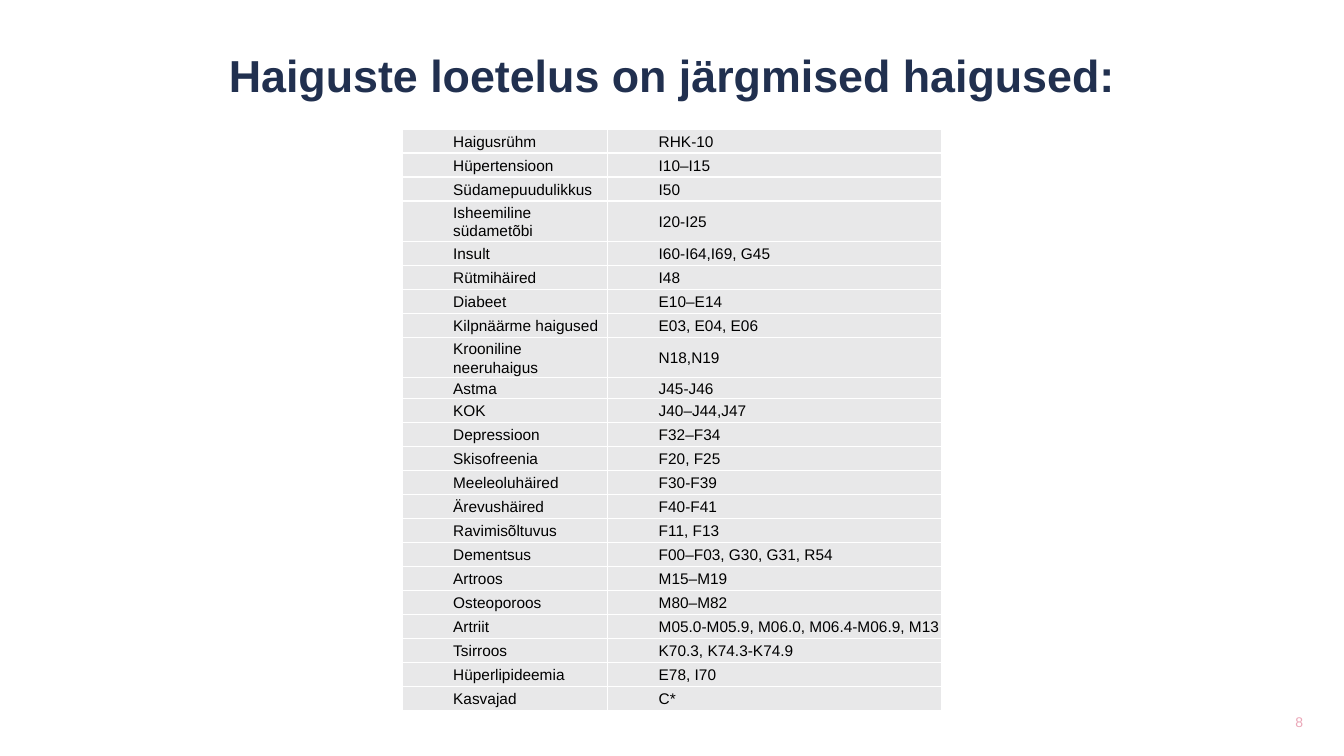
from lxml import etree
from pptx import Presentation
from pptx.dml.color import RGBColor
from pptx.enum.text import MSO_ANCHOR, MSO_AUTO_SIZE, PP_ALIGN
from pptx.oxml.ns import qn
from pptx.util import Cm, Pt

MIDDLE, BOTTOM = MSO_ANCHOR.MIDDLE, MSO_ANCHOR.BOTTOM
CENTER, LEFT = PP_ALIGN.CENTER, PP_ALIGN.LEFT
NO_AUTOFIT = MSO_AUTO_SIZE.NONE
TITLE_ONLY = 5
FONT = "Arial"
NAVY, PINK, BLACK, GREY, WHITE = "21304F", "EBA7B8", "000000", "E8E8E9", "FFFFFF"
ROW_HEIGHT = Cm(12.1) // 20
SHORT_ROW_HEIGHT = Cm(0.52)
SHORT_ROWS = ("Krooniline neeruhaigus", "Astma")
COLUMN_WIDTHS = (5.18, 8.43)
DISEASES = (
    ("Haigusrühm", "RHK-10"),
    ("Hüpertensioon", "I10–I15"),
    ("Südamepuudulikkus", "I50"),
    ("Isheemiline südametõbi", "I20-I25"),
    ("Insult", "I60-I64,I69, G45"),
    ("Rütmihäired", "I48"),
    ("Diabeet", "E10–E14"),
    ("Kilpnäärme haigused", "E03, E04, E06"),
    ("Krooniline neeruhaigus", "N18,N19"),
    ("Astma", "J45-J46"),
    ("KOK", "J40–J44,J47"),
    ("Depressioon", "F32–F34"),
    ("Skisofreenia", "F20, F25"),
    ("Meeleoluhäired", "F30-F39"),
    ("Ärevushäired", "F40-F41"),
    ("Ravimisõltuvus", "F11, F13"),
    ("Dementsus", "F00–F03, G30, G31, R54"),
    ("Artroos", "M15–M19"),
    ("Osteoporoos", "M80–M82"),
    ("Artriit", "M05.0-M05.9, M06.0, M06.4-M06.9, M13"),
    ("Tsirroos", "K70.3, K74.3-K74.9"),
    ("Hüperlipideemia", "E78, I70"),
    ("Kasvajad", "C*"),
)


def colour(value):
    """Turn a hex string into a colour."""
    return RGBColor.from_string(value)


def write(frame, text, size, shade, align, bold=False):
    """Fill a text frame with one formatted paragraph and return it."""
    frame.text = text
    para = frame.paragraphs[0]
    para.alignment = align
    font = para.runs[0].font
    font.name, font.size, font.bold = FONT, Pt(size), bold
    font.color.rgb = colour(shade)
    return para


def place(shape, box):
    """Move a shape to a box of left, top, width and height in centimetres."""
    shape.left, shape.top, shape.width, shape.height = map(Cm, box)


def add_title(page, box):
    """Place and format the page title."""
    title = page.shapes.title
    place(title, box)
    frame = title.text_frame
    frame.margin_left = frame.margin_right = frame.margin_top = frame.margin_bottom = 0
    frame.auto_size, frame.vertical_anchor, frame.word_wrap = NO_AUTOFIT, BOTTOM, True
    para = write(frame, "Haiguste loetelus on järgmised haigused:", 32, NAVY, CENTER, True)
    para.line_spacing, para.space_before = 0.9, Pt(10)


def add_borders(cell):
    """Draw white lines on all four sides of a table cell."""
    properties = cell._tc.get_or_add_tcPr()
    for position, side in enumerate(("a:lnL", "a:lnR", "a:lnT", "a:lnB")):
        line = etree.Element(qn(side), w=str(Pt(1)))
        fill = etree.SubElement(line, qn("a:solidFill"))
        etree.SubElement(fill, qn("a:srgbClr"), val=WHITE)
        properties.insert(position, line)


def format_cell(cell, text, space_after):
    """Write an indented entry into a grey table cell."""
    cell.fill.solid()
    cell.fill.fore_color.rgb = colour(GREY)
    cell.vertical_anchor = MIDDLE
    cell.margin_left = cell.margin_right = cell.margin_top = Cm(0.02)
    cell.margin_bottom = 0
    para = write(cell.text_frame, text, 11, BLACK, LEFT)
    para.line_spacing, para.space_after = 1.07, Pt(space_after)
    indent = para._p.get_or_add_pPr()
    indent.set("marL", str(Cm(1.27)))
    indent.set("indent", "0")
    add_borders(cell)


def add_disease_table(page, box):
    """Add the table of disease groups and their codes."""
    table = page.shapes.add_table(len(DISEASES), 2, *map(Cm, box)).table
    table.first_row = table.horz_banding = False
    for column, width in zip(table.columns, COLUMN_WIDTHS):
        column.width = Cm(width)
    for row, (group, codes) in zip(table.rows, DISEASES):
        row.height = SHORT_ROW_HEIGHT if group in SHORT_ROWS else ROW_HEIGHT
        format_cell(row.cells[0], group, 0)
        format_cell(row.cells[1], codes, 8)


def add_page_number(page, box):
    """Add the page number in the corner."""
    frame = page.shapes.add_textbox(*map(Cm, box)).text_frame
    frame.word_wrap, frame.vertical_anchor = True, MIDDLE
    write(frame, "8", 10, PINK, CENTER)


def main():
    """Build and save the deck."""
    deck = Presentation()
    deck.slide_width, deck.slide_height = Cm(33.87), Cm(19.05)
    page = deck.slides.add_slide(deck.slide_layouts[TITLE_ONLY])
    add_page_number(page, (31.62, 17.32, 2.24, 1.73))
    add_title(page, (2.24, 1.35, 29.41, 1.22))
    add_disease_table(page, (10.13, 3.25, sum(COLUMN_WIDTHS), 13.8))
    deck.save("out.pptx")


if __name__ == "__main__":
    main()
